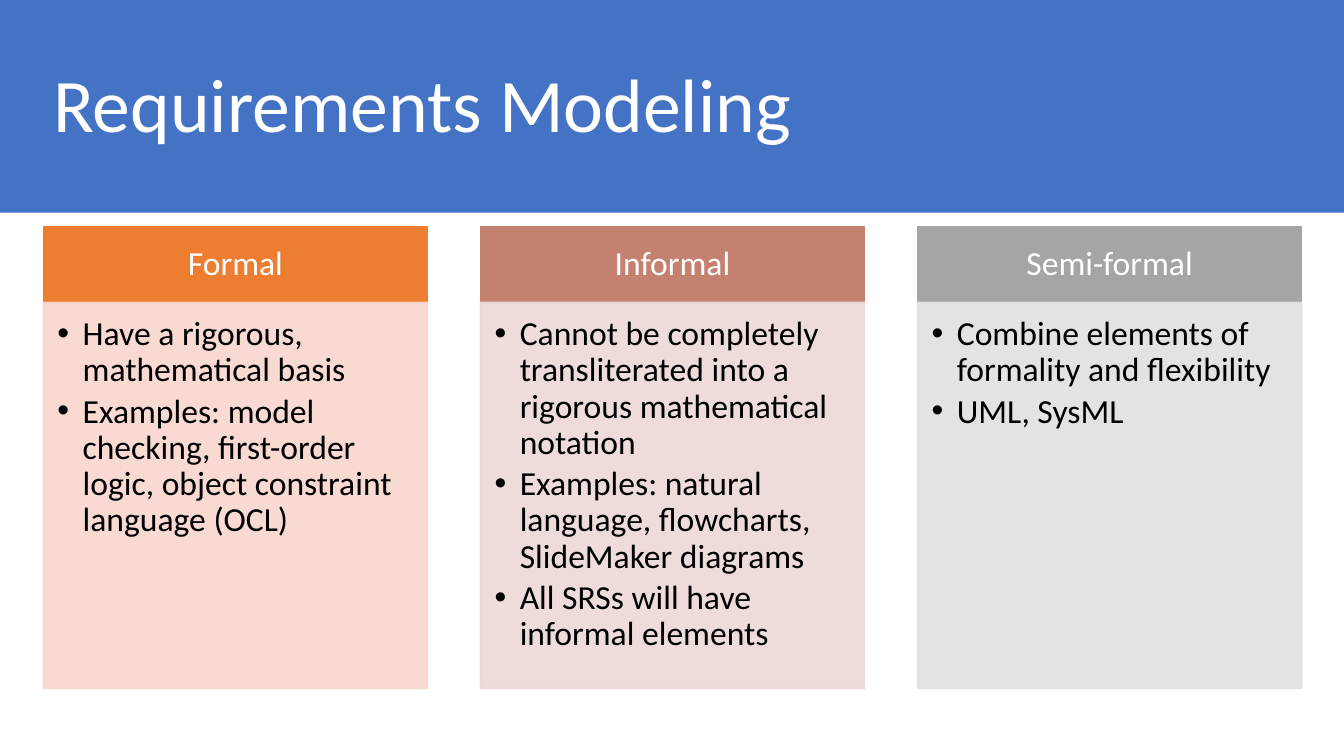
import pptx
import pptx.util
import pptx.dml.color
import pptx.enum.shapes
import pptx.enum.text
import lxml.etree
import pptx.oxml.ns

Inches = pptx.util.Inches
Pt = pptx.util.Pt
qn = pptx.oxml.ns.qn
ALIGN = pptx.enum.text.PP_ALIGN
ANCHOR = pptx.enum.text.MSO_ANCHOR

TITLE = "Requirements Modeling"
COLUMNS = [
    ("Formal", "ED7D31", "F8D7CE", [
        "Have a rigorous, mathematical basis",
        "Examples: model checking, first-order logic, object constraint language (OCL)",
    ]),
    ("Informal", "C48170", "EDD9D7", [
        "Cannot be completely transliterated into a rigorous mathematical notation",
        "Examples: natural language, flowcharts, SlideMaker diagrams",
        "All SRSs will have informal elements",
    ]),
    ("Semi-formal", "A5A5A5", "E1E1E1", [
        "Combine elements of formality and flexibility",
        "UML, SysML",
    ]),
]
LEFT, STEP, WIDTH = 0.43, 4.335, 3.81
TOP, HEAD, BODY = 2.25, 0.75, 3.83


def paint(target, color):
    target.rgb = pptx.dml.color.RGBColor.from_string(color)


def fade(fill, percent):
    color = fill._xPr.find(qn("a:solidFill"))[0]
    lxml.etree.SubElement(color, qn("a:alpha")).set("val", str(percent * 1000))


def add_box(slide, place, color, border=True, opaque=100):
    box = slide.shapes.add_shape(
        pptx.enum.shapes.MSO_SHAPE.RECTANGLE, *map(Inches, place))
    box.shadow.inherit = False
    box.fill.solid()
    paint(box.fill.fore_color, color)
    if border:
        box.line.width = Pt(1)
        paint(box.line.color, color)
    else:
        box.line.fill.background()
    if opaque < 100:
        fade(box.fill, opaque)
        fade(box.line.fill, opaque)
    return box


def write(box, lines, size, color, align, anchor, insets, after=0):
    frame = box.text_frame
    frame.word_wrap = True
    frame.vertical_anchor = anchor
    (frame.margin_left, frame.margin_top,
     frame.margin_right, frame.margin_bottom) = map(Inches, insets)
    frame.text = "\n".join(lines)
    for para in frame.paragraphs:
        para.alignment = align
        para.line_spacing = 0.9
        para.space_after = Pt(after)
        for run in para.runs:
            run.font.name = "Calibri"
            run.font.size = Pt(size)
            paint(run.font.color, color)


def add_bullets(box):
    for para in box.text_frame.paragraphs:
        props = para._p.get_or_add_pPr()
        props.set("marL", str(Inches(0.25)))
        props.set("indent", str(Inches(-0.25)))
        font = lxml.etree.SubElement(props, qn("a:buFont"))
        font.set("typeface", "Arial")
        lxml.etree.SubElement(props, qn("a:buChar")).set("char", "•")


def main():
    deck = pptx.Presentation()
    deck.slide_width = Inches(13.33)
    deck.slide_height = Inches(7.5)
    slide = deck.slides.add_slide(deck.slide_layouts[6])

    add_box(slide, (0, 0, 13.33, 2.11), "4472C4", border=False)
    title = slide.shapes.add_textbox(*map(Inches, (LEFT, 0.35, 12.48, 1.45)))
    write(title, [TITLE], 54, "FFFFFF", ALIGN.LEFT, ANCHOR.MIDDLE,
          (0.1, 0.05, 0.1, 0.05))

    for index, (name, dark, light, points) in enumerate(COLUMNS):
        left = LEFT + index * STEP
        head = add_box(slide, (left, TOP, WIDTH, HEAD), dark)
        write(head, [name], 24, "FFFFFF", ALIGN.CENTER, ANCHOR.MIDDLE,
              (0.19, 0.11, 0.19, 0.11))
        body = add_box(slide, (left, TOP + HEAD, WIDTH, BODY), light, opaque=90)
        write(body, points, 24, "000000", ALIGN.LEFT, ANCHOR.TOP,
              (0.14, 0.14, 0.19, 0.21), after=3.6)
        add_bullets(body)

    deck.save("out.pptx")


if __name__ == "__main__":
    main()
